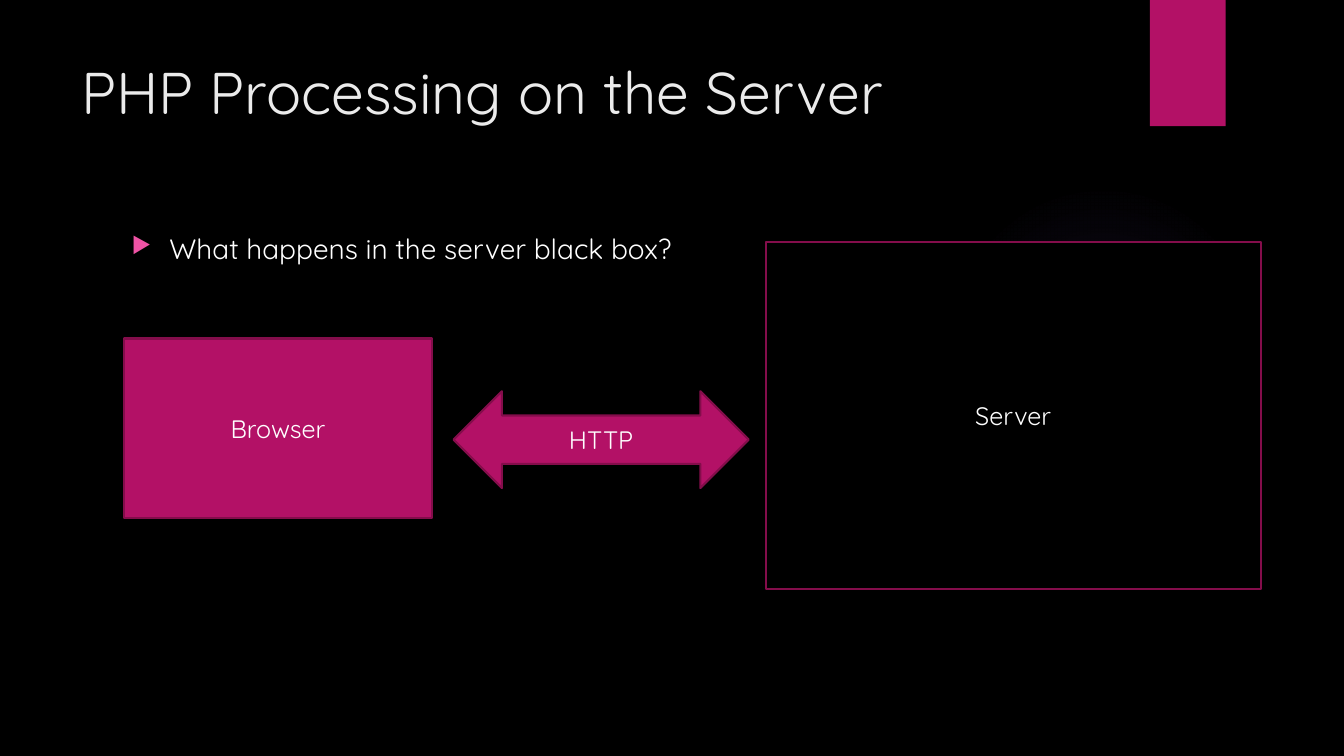
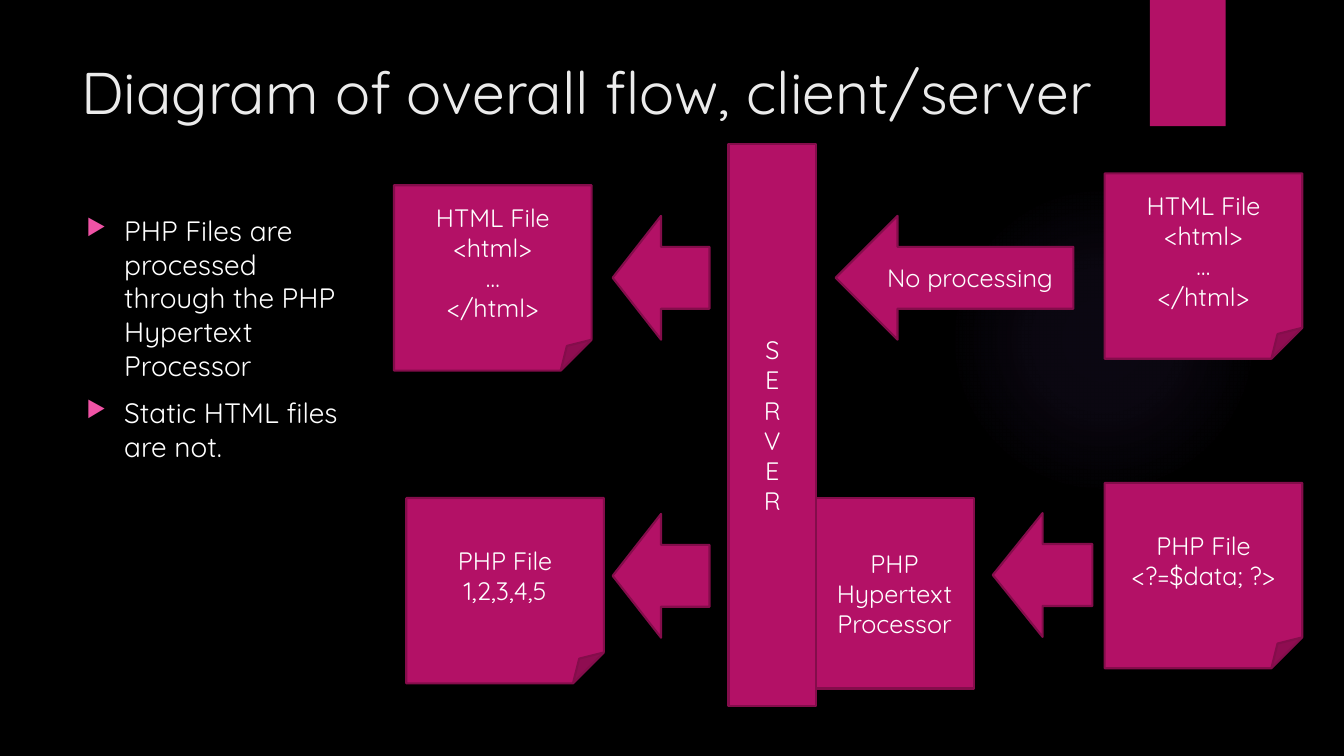
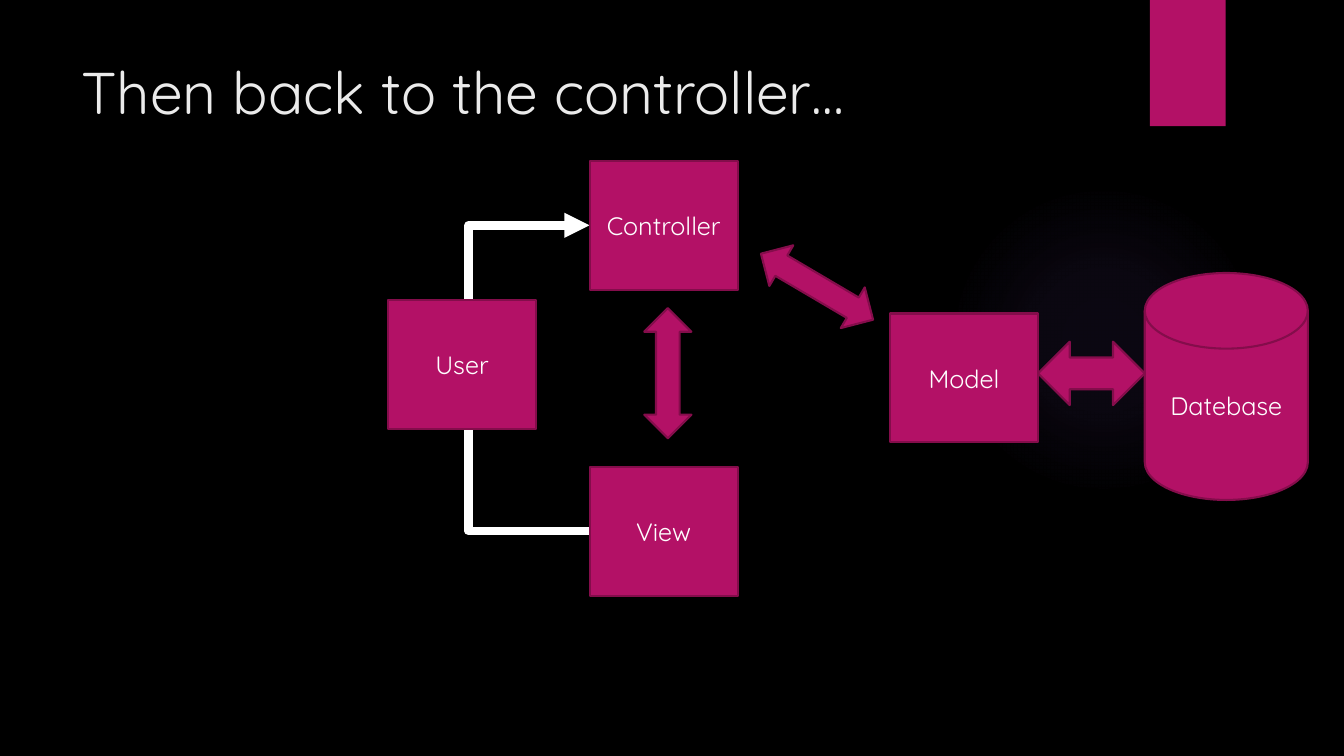
from lxml.etree import SubElement
from pptx import Presentation
from pptx.dml.color import RGBColor
from pptx.enum.shapes import MSO_CONNECTOR, MSO_SHAPE
from pptx.enum.text import MSO_ANCHOR, PP_ALIGN
from pptx.oxml import parse_xml
from pptx.oxml.ns import nsdecls, qn
from pptx.util import Cm, Pt

FONT = "Quicksand"
HUES = {
    "back": "000000",
    "pink": "B31166",
    "edge": "840D4B",
    "mark": "EF53A5",
    "title": "EBEBEB",
    "text": "FFFFFF",
    "glow": "9B6BF2",
}
GLOW = [(0, 7), (36, 6), (69, 0)]

RECT = MSO_SHAPE.RECTANGLE
FILE = MSO_SHAPE.FOLDED_CORNER
LEFT = MSO_SHAPE.LEFT_ARROW
BOTH = MSO_SHAPE.LEFT_RIGHT_ARROW
DISK = MSO_SHAPE.FLOWCHART_MAGNETIC_DISK

PAGE = (4.98, 4.67)
CARD = (3.73, 3.25)
SLIM = (3.28, 1.19)
HTML = "HTML File\n<html>\n…\n</html>"

SLIDES = [
    {
        "title": ("PHP Processing on the Server", 26.14),
        "body": ((3.07, 5.72, 24.84, 11.66),
                 ["What happens in the server black box?"]),
        "parts": [
            (RECT, (3.12, 8.53, 7.77, 4.52), "Browser"),
            (RECT, (19.3, 6.1, 12.47, 8.74), "Server", "back"),
            (BOTH, (11.43, 9.86, 7.44, 2.44), "HTTP"),
        ],
    },
    {
        "title": ("Diagram of overall flow, client/server", 28.42),
        "body": ((1.93, 5.26, 7.24, 11.66),
                 ["PHP Files are processed through the PHP Hypertext Processor",
                  "Static HTML files are not."]),
        "parts": [
            (FILE, (27.84, 12.17, *PAGE), "PHP File\n<?=$data; ?>"),
            (RECT, (20.55, 12.55, 3.99, 4.8), "PHP\nHypertext Processor"),
            (LEFT, (25.02, 12.93, 2.51, 3.12), ""),
            (LEFT, (15.44, 12.95, 2.44, 3.12), ""),
            (FILE, (10.24, 12.55, *PAGE), "PHP File\n1,2,3,4,5"),
            (RECT, (18.36, 3.63, 2.21, 14.17), "\v".join("SERVER")),
            (FILE, (27.84, 4.37, *PAGE), HTML),
            (LEFT, (21.06, 5.44, 5.99, 3.12), "No processing"),
            (LEFT, (15.44, 5.44, 2.44, 3.12), ""),
            (FILE, (9.93, 4.67, *PAGE), HTML),
        ],
    },
    {
        "title": ("Then back to the controller…", 26.14),
        "bend": ((14.88, 13.38), (14.86, 5.68), 11.81),
        "parts": [
            (DISK, (28.85, 6.88, 4.11, 5.72), "Datebase"),
            (RECT, (22.43, 7.9, *CARD), "Model"),
            (RECT, (14.86, 4.06, *CARD), "Controller"),
            (RECT, (14.86, 11.76, *CARD), "View"),
            (BOTH, (26.16, 8.61, 2.69, 1.6), ""),
            (BOTH, (18.95, 6.63, *SLIM), "", "pink", 30.5),
            (BOTH, (15.19, 8.81, *SLIM), "", "pink", 90),
            (RECT, (9.78, 7.57, *CARD), "User"),
        ],
    },
]


def rgb(name):
    return RGBColor.from_string(HUES[name])


def style(para, size, hue):
    para.font.size = Pt(size)
    para.font.name = FONT
    para.font.color.rgb = rgb(hue)


def add_part(slide, kind, box, text="", fill="pink", turn=0, edge="edge"):
    shape = slide.shapes.add_shape(kind, *map(Cm, box))
    shape.shadow.inherit = False
    shape.rotation = turn
    shape.fill.solid()
    shape.fill.fore_color.rgb = rgb(fill)
    if edge:
        shape.line.color.rgb = rgb(edge)
        shape.line.width = Pt(1.5)
    else:
        shape.line.fill.background()
    if text:
        frame = shape.text_frame
        frame.text = text
        frame.vertical_anchor = MSO_ANCHOR.MIDDLE
        for para in frame.paragraphs:
            para.alignment = PP_ALIGN.CENTER
            style(para, 18, "text")
    return shape


def add_glow(slide):
    shape = add_part(slide, MSO_SHAPE.OVAL, (23.9, 4.65, 7.82, 7.82), edge=None)
    stops = "".join(
        f'<a:gs pos="{pos * 1000}"><a:srgbClr val="{HUES["glow"]}">'
        f'<a:alpha val="{alpha * 1000}"/></a:srgbClr></a:gs>'
        for pos, alpha in GLOW)
    grad = parse_xml(
        f'<a:gradFill {nsdecls("a")} rotWithShape="1"><a:gsLst>{stops}</a:gsLst>'
        '<a:path path="circle"><a:fillToRect l="50000" t="50000" r="50000" b="50000"/>'
        '</a:path></a:gradFill>')
    props = shape._element.spPr
    props.replace(props.find(qn("a:solidFill")), grad)


def add_text(slide, box, lines):
    frame = slide.shapes.add_textbox(*map(Cm, box)).text_frame
    frame.word_wrap = True
    frame.text = "\n".join(lines)
    return frame.paragraphs


def add_body(slide, box, lines):
    for num, para in enumerate(add_text(slide, box, lines)):
        props = para._p.get_or_add_pPr()
        props.set("marL", str(Cm(0.95)))
        props.set("indent", str(-Cm(0.95)))
        if num:
            para.space_before = Pt(10)
        tint = SubElement(props, qn("a:buClr"))
        SubElement(tint, qn("a:srgbClr"), val=HUES["mark"])
        SubElement(props, qn("a:buSzPct"), val="80000")
        SubElement(props, qn("a:buChar"), char="▶")
        style(para, 20, "text")


def add_bend(slide, start, end, via):
    line = slide.shapes.add_connector(
        MSO_CONNECTOR.ELBOW, *map(Cm, start + end))
    line.line.color.rgb = rgb("text")
    line.line.width = Pt(6)
    props = line._element.spPr
    ratio = round((start[0] - via) / (start[0] - end[0]) * 100000)
    guides = props.find(qn("a:prstGeom")).get_or_add_avLst()
    SubElement(guides, qn("a:gd"), name="adj1", fmla=f"val {ratio}")
    stroke = line.line._get_or_add_ln()
    SubElement(stroke, qn("a:round"))
    SubElement(stroke, qn("a:tailEnd"), type="triangle")
    SubElement(props, qn("a:effectLst"))


def add_base(deck, title, width):
    slide = deck.slides.add_slide(deck.slide_layouts[6])
    add_glow(slide)
    add_part(slide, RECT, (28.98, 0, 1.91, 3.18), edge=None)
    head = add_text(slide, (1.8, 1.27, width, 3.89), [title])
    style(head[0], 42, "title")
    return slide


def main():
    deck = Presentation()
    deck.slide_width, deck.slide_height = Cm(33.87), Cm(19.05)
    back = deck.slide_master.background.fill
    back.solid()
    back.fore_color.rgb = rgb("back")
    for data in SLIDES:
        slide = add_base(deck, *data["title"])
        if "body" in data:
            add_body(slide, *data["body"])
        if "bend" in data:
            add_bend(slide, *data["bend"])
        for part in data["parts"]:
            add_part(slide, *part)
    deck.save("out.pptx")


if __name__ == "__main__":
    main()
